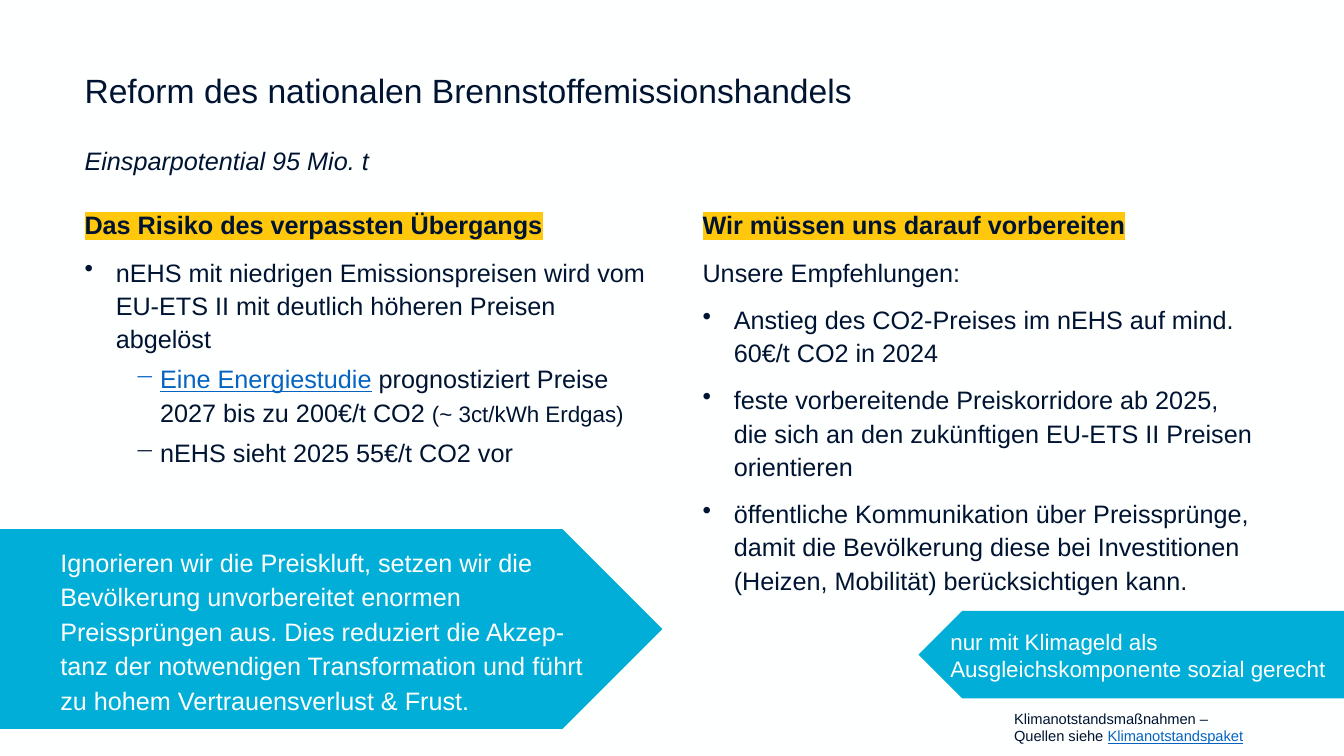
from dataclasses import dataclass

from lxml import etree
from pptx import Presentation
from pptx.dml.color import RGBColor
from pptx.enum.shapes import MSO_SHAPE
from pptx.enum.text import MSO_ANCHOR, PP_ALIGN
from pptx.oxml.ns import qn
from pptx.util import Inches, Pt

PENTAGON = MSO_SHAPE.PENTAGON
TOP, MIDDLE = MSO_ANCHOR.TOP, MSO_ANCHOR.MIDDLE
LEFT = PP_ALIGN.LEFT
FONT = "Arial"
COLORS = {
    "background": "FEFFFF",
    "text": "001432",
    "link": "0563C1",
    "marker": "FFC80C",
    "arrow": "00AED7",
}


@dataclass
class Span:
    text: str
    size: float = 18
    color: str = "text"
    bold: bool = False
    italic: bool = False
    underline: bool = False
    marked: bool = False


@dataclass
class Para:
    spans: list[Span]
    line_spacing: float = 1.0
    before: float = 0
    level: int = 0
    margin: float = 0
    hanging: float = 0
    bullet: str = ""


@dataclass
class Box:
    left: float
    top: float
    width: float
    height: float
    paras: list[Para]


@dataclass
class Arrow(Box):
    flipped: bool = False


def rgb(name: str) -> RGBColor:
    return RGBColor.from_string(COLORS[name])


def link(text: str, size: float = 18) -> Span:
    return Span(text, size, "link", underline=True)


def heading(text: str) -> Para:
    return Para([Span(text, bold=True, marked=True)], 1.1)


def body(text: str) -> Para:
    return Para([Span(text)], 1.1, 10)


def bullet(text: str) -> Para:
    return Para([Span(text)], 1.1, 10, 0, 0.31, 0.31, "•")


def dash(*spans: Span) -> Para:
    return Para(list(spans), 1.1, 5, 1, 0.75, 0.25, "−")


def add_span(p, span: Span) -> None:
    r = p.add_run()
    r.text = span.text
    font = r.font
    font.name, font.size = FONT, Pt(span.size)
    font.bold, font.italic, font.underline = span.bold, span.italic, span.underline
    font.color.rgb = rgb(span.color)
    if span.marked:
        highlight = etree.Element(qn("a:highlight"))
        etree.SubElement(highlight, qn("a:srgbClr"), val=COLORS["marker"])
        r.font._element.find(qn("a:solidFill")).addnext(highlight)


def fill_text(tf, paras: list[Para], anchor: MSO_ANCHOR) -> None:
    tf.word_wrap = True
    tf.vertical_anchor = anchor
    for i, para in enumerate(paras):
        p = tf.add_paragraph() if i else tf.paragraphs[0]
        p.level = para.level
        pPr = p._p.get_or_add_pPr()
        pPr.set("marL", str(Inches(para.margin)))
        pPr.set("indent", str(-Inches(para.hanging)))
        if para.bullet:
            etree.SubElement(pPr, qn("a:buChar"), char=para.bullet)
        p.alignment = LEFT
        p.line_spacing = para.line_spacing
        p.space_before = Pt(para.before)
        for span in para.spans:
            add_span(p, span)


def draw(shapes, box: Box) -> None:
    frame = [Inches(v) for v in (box.left, box.top, box.width, box.height)]
    if not isinstance(box, Arrow):
        fill_text(shapes.add_textbox(*frame).text_frame, box.paras, TOP)
        return
    sp = shapes.add_shape(PENTAGON, *frame)
    sp.shadow.inherit = False
    sp.fill.solid()
    sp.fill.fore_color.rgb = rgb("arrow")
    sp.line.fill.background()
    if box.flipped:
        sp._element.spPr.find(qn("a:xfrm")).set("flipH", "1")
    fill_text(sp.text_frame, box.paras, MIDDLE)


BOXES = [
    Box(0.74, 2, 5.83, 4.76, [
        heading("Das Risiko des verpassten Übergangs"),
        bullet("nEHS mit niedrigen Emissionspreisen wird vom EU-ETS II "
               "mit deutlich höheren Preisen abgelöst"),
        dash(link("Eine Energiestudie"),
             Span(" prognostiziert Preise 2027 bis zu 200€/t CO2 "),
             Span("(~ 3ct/kWh Erdgas)", 16)),
        dash(Span("nEHS sieht 2025 55€/t CO2 vor")),
    ]),
    Box(6.87, 2, 5.7, 4.76, [
        heading("Wir müssen uns darauf vorbereiten"),
        body("Unsere Empfehlungen:"),
        bullet("Anstieg des CO2-Preises im nEHS auf mind. 60€/t CO2 in 2024"),
        bullet("feste vorbereitende Preiskorridore ab 2025, die sich an den "
               "zukünftigen EU-ETS II Preisen orientieren"),
        bullet("öffentliche Kommunikation über Preissprünge, damit die "
               "Bevölkerung diese bei Investitionen (Heizen, Mobilität) "
               "berücksichtigen kann."),
    ]),
    Box(0.74, 0.69, 9.04, 0.5, [
        Para([Span("Reform des nationalen Brennstoffemissionshandels", 24)], 0.9),
        Para([Span("Einsparpotential 95 Mio. t", italic=True)], 0.9, 27),
    ]),
    Arrow(0, 5.25, 6.57, 1.98, [
        Para([Span("Ignorieren wir die Preiskluft, setzen wir die Bevölkerung "
                   "unvorbereitet enormen Preissprüngen aus. Dies reduziert die "
                   "Akzep-tanz der notwendigen Transformation und führt zu hohem "
                   "Vertrauensverlust & Frust.", color="background")],
             1.14, level=1, margin=0.5),
    ]),
    Box(9.96, 6.99, 5.31, 0.47, [
        Para([Span("Klimanotstandsmaßnahmen –", 10.5)]),
        Para([Span("Quellen siehe ", 10.5), link("Klimanotstandspaket", 10.5)]),
    ]),
    Arrow(9.11, 6.06, 4.51, 0.87, [
        Para([Span("nur mit Klimageld als Ausgleichskomponente sozial gerecht",
                   16, "background")]),
    ], flipped=True),
]


def main() -> None:
    prs = Presentation()
    prs.slide_width, prs.slide_height = Inches(13.33), Inches(7.5)
    s = prs.slides.add_slide(prs.slide_layouts[6])
    s.background.fill.solid()
    s.background.fill.fore_color.rgb = rgb("background")
    for box in BOXES:
        draw(s.shapes, box)
    prs.save("out.pptx")


if __name__ == "__main__":
    main()
